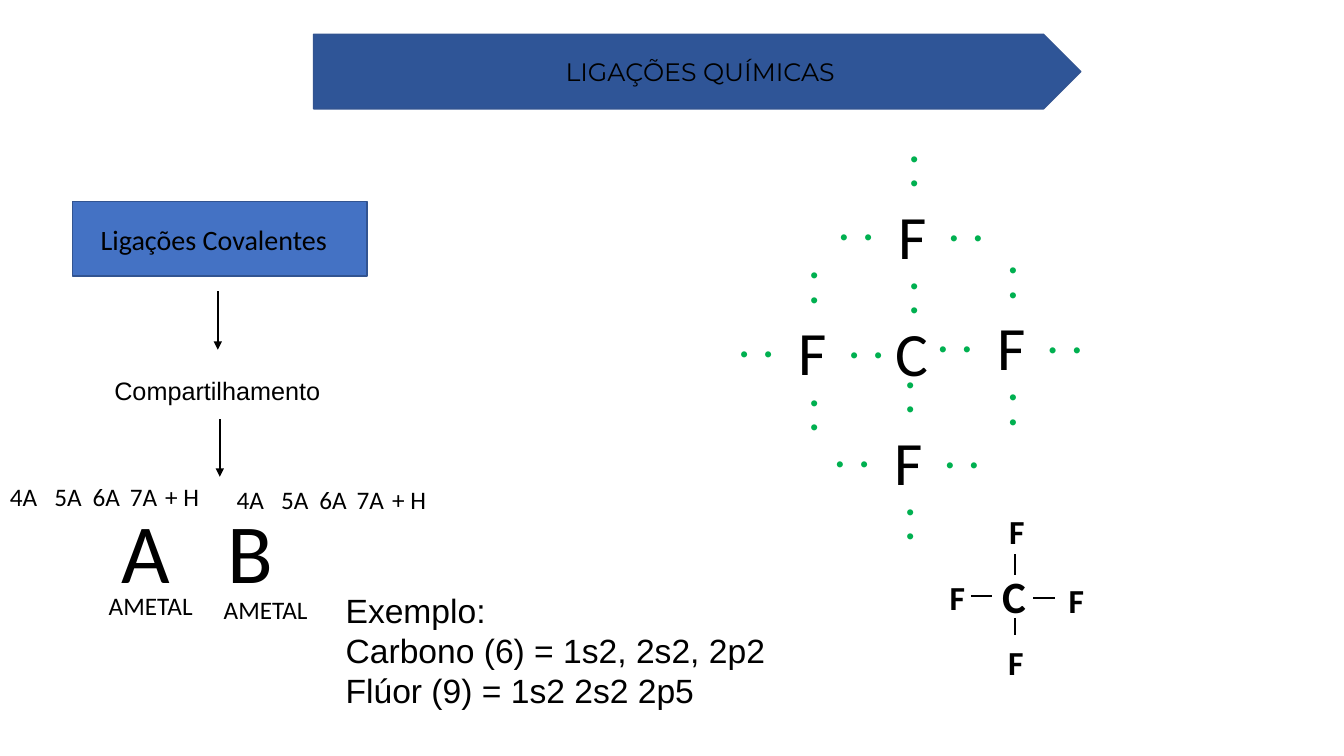
from lxml import etree
from pptx import Presentation
from pptx.dml.color import RGBColor
from pptx.enum.shapes import MSO_CONNECTOR, MSO_SHAPE
from pptx.enum.text import MSO_AUTO_SIZE, PP_ALIGN
from pptx.oxml.ns import qn
from pptx.util import Pt

PX = 9144
BLACK, GREEN, NAVY = "000000", "00B050", "325491"


def px(*lengths):
    """Turn lengths in px into EMU."""
    return [length * PX for length in lengths]


def rgb(code):
    """Turn a hex string into a colour."""
    return RGBColor.from_string(code)


def add_text(slide, box, lines, size, font="Calibri", color=BLACK, bold=None,
             align=None, rotation=0):
    """Place one text box with a paragraph for each line."""
    label = slide.shapes.add_textbox(*px(*box))
    label.rotation = rotation
    frame = label.text_frame
    frame.word_wrap = True
    frame.auto_size = MSO_AUTO_SIZE.SHAPE_TO_FIT_TEXT
    for index, line in enumerate(lines):
        paragraph = frame.add_paragraph() if index else frame.paragraphs[0]
        paragraph.alignment = align
        run = paragraph.add_run()
        run.text = line
        run.font.name, run.font.size, run.font.bold = font, Pt(size), bold
        run.font.color.rgb = rgb(color)


def add_panel(slide, box, preset, fill):
    """Place a filled shape with a thin navy outline."""
    panel = slide.shapes.add_shape(preset, *px(*box))
    panel.shadow.inherit = False
    panel.fill.solid()
    panel.fill.fore_color.rgb = rgb(fill)
    panel.line.color.rgb = rgb(NAVY)
    panel.line.width = Pt(1)


def add_line(slide, ends, arrow=False):
    """Draw a black straight line, with an arrowhead if asked."""
    line = slide.shapes.add_connector(MSO_CONNECTOR.STRAIGHT, *px(*ends))
    line.line.color.rgb = rgb(BLACK)
    line.line.width = Pt(1.5)
    if arrow:
        etree.SubElement(line.line._get_or_add_ln(), qn("a:tailEnd"), type="triangle")
    etree.SubElement(line._element.spPr, qn("a:effectLst"))


def add_title(slide, left, top, width, height):
    """Draw the title banner."""
    add_panel(slide, (left, top, width, height), MSO_SHAPE.PENTAGON, "2F5597")
    add_text(slide, (left + 105, top + 17, 557, 40), ["LIGAÇÕES QUÍMICAS"], 18,
             "Montserrat", align=PP_ALIGN.CENTER)


def add_covalent_flow(slide, left, top, width, height):
    """Draw the bond type and the arrows through sharing to the atoms."""
    add_panel(slide, (left, top, width, height), MSO_SHAPE.RECTANGLE, "4472C4")
    add_text(slide, (left + 18, top + 16, 274, 44), ["Ligações Covalentes"], 20)
    add_line(slide, (left + 144, top + 89, left + 144, top + 147), arrow=True)
    add_text(slide, (left + 18, top + 167, 251, 40), ["Compartilhamento"], 18,
             "Arial", align=PP_ALIGN.CENTER)
    add_line(slide, (left + 146, top + 216, left + 146, top + 273), arrow=True)


def add_nonmetal(slide, left, top, letter, letter_left, class_left, class_top):
    """Draw the groups of a nonmetal above its letter and class."""
    for group, offset in zip(("4A", "5A", "6A", "7A", "+ H"), (0, 44, 82, 119, 154)):
        add_text(slide, (left + offset, top, 77, 40), [group], 18)
    add_text(slide, (letter_left, 491, 90, 111), [letter], 60)
    add_text(slide, (class_left, class_top, 109, 40), ["AMETAL"], 18)


def add_example(slide, left, top, width, height):
    """Write the electron configurations of the example."""
    add_text(slide, (left, top, width, height),
             ["Exemplo:", "Carbono (6) = 1s2, 2s2, 2p2", "Flúor (9) = 1s2 2s2 2p5"],
             24, "Arial")


def add_fluorine(slide, left, top):
    """Draw a fluorine atom with an electron pair on each side."""
    add_text(slide, (left, top, 55, 84), ["F"], 44)
    pairs = ((-60, -7, 0), (-7, 91, 90), (-7, -35, 90), (49, -6, 0))
    for across, down, rotation in pairs:
        add_text(slide, (left + across, top + down, 99, 71), [". ."], 36,
                 color=GREEN, rotation=rotation)


def add_lewis_diagram(slide, left, top):
    """Draw carbon sharing electrons with four fluorine atoms."""
    add_text(slide, (left, top, 55, 84), ["C"], 44)
    for across, down in ((-96, -1), (-1, 108), (101, -6), (3, -117)):
        add_fluorine(slide, left + across, top + down)


def add_structural_formula(slide, left, top):
    """Draw the carbon with its four single bonds."""
    add_text(slide, (left, top, 89, 64), ["C"], 32, bold=True)
    bonds = ((-21, 32, 0, 32), (41, 34, 62, 34), (23, 54, 23, 71), (23, 11, 23, -9))
    for x1, y1, x2, y2 in bonds:
        add_line(slide, (left + x1, top + y1, left + x2, top + y2))
    for across, down in ((-52, 8), (6, 73), (66, 11), (7, -57)):
        add_text(slide, (left + across, top + down, 137, 50), ["F"], 24, bold=True)


def main():
    """Build the slide on covalent bonds."""
    deck = Presentation()
    deck.slide_width, deck.slide_height = px(1333, 750)
    slide = deck.slides.add_slide(deck.slide_layouts[6])
    add_covalent_flow(slide, 72, 200, 292, 74)
    add_title(slide, 311, 34, 761, 74)
    add_nonmetal(slide, 225, 476, "B", 216, 212, 585)
    add_nonmetal(slide, 0, 473, "A", 111, 98, 581)
    add_example(slide, 333, 580, 687, 131)
    add_lewis_diagram(slide, 878, 308)
    add_structural_formula(slide, 984, 559)
    deck.save("out.pptx")


if __name__ == "__main__":
    main()
